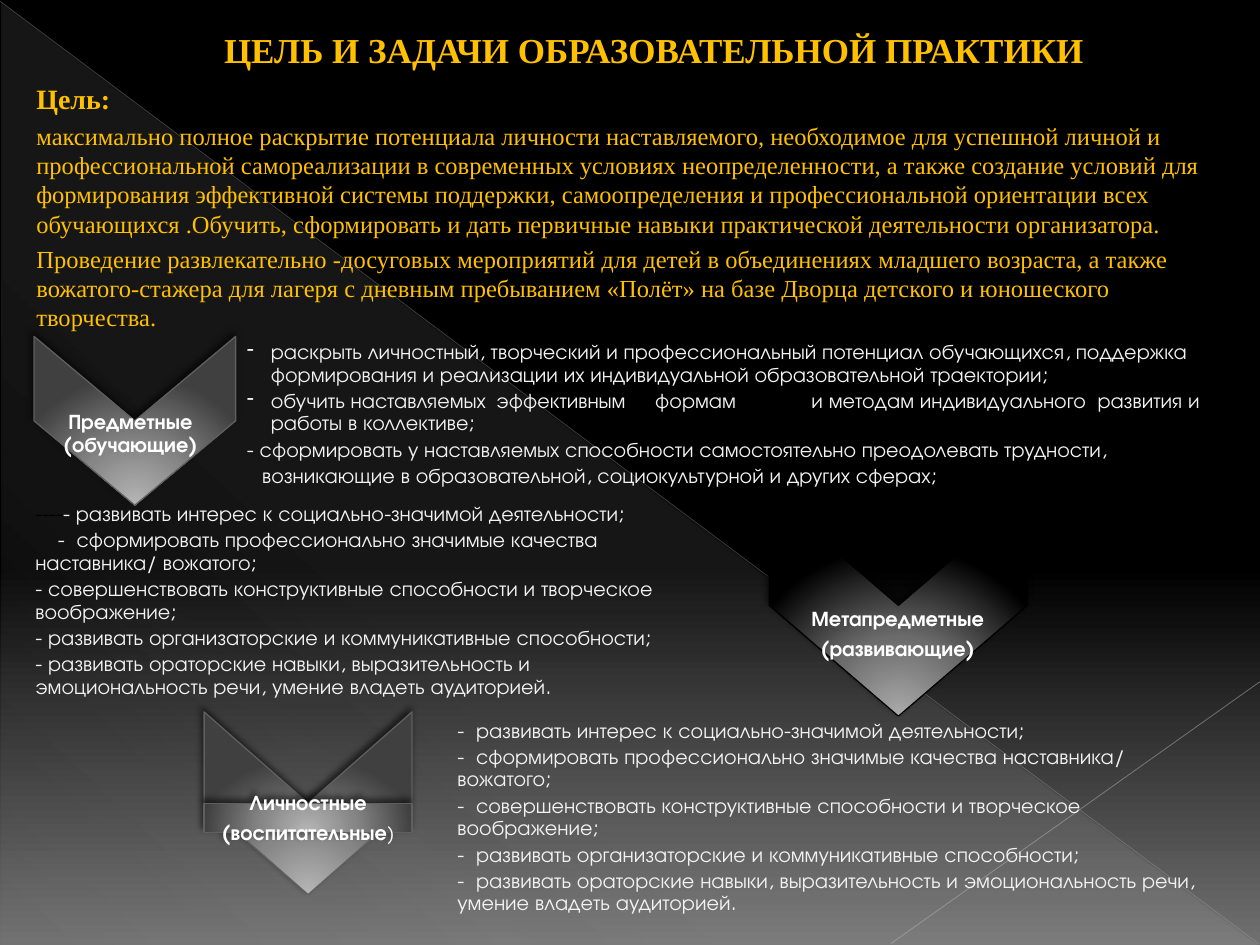
from dataclasses import dataclass

from lxml import etree
from pptx import Presentation
from pptx.dml.color import RGBColor
from pptx.enum.shapes import MSO_CONNECTOR, MSO_SHAPE
from pptx.enum.text import MSO_ANCHOR, PP_ALIGN
from pptx.oxml.ns import qn
from pptx.util import Inches, Pt

LEFT, CENTER = PP_ALIGN.LEFT, PP_ALIGN.CENTER
TOP, MIDDLE = MSO_ANCHOR.TOP, MSO_ANCHOR.MIDDLE


@dataclass(frozen=True)
class Theme:
    serif: str = "Times New Roman"
    sans: str = "TeX Gyre Adventor"
    gold: str = "FFC000"
    white: str = "FFFFFF"
    pale: str = "F2F2F2"
    black: str = "000000"
    title: int = 20
    heading: int = 16
    goal: int = 14
    body: int = 12
    small: int = 11


THEME = Theme()
GOAL = dict(font=THEME.serif, size=THEME.goal, color=THEME.gold, before=3)
HEADING = GOAL | dict(size=THEME.heading, bold=True)
TITLE = GOAL | dict(size=THEME.title, bold=True, before=4)
TASK = dict(font=THEME.sans, size=THEME.body, color=THEME.pale, spacing=0.9, after=2)
LABEL = TASK | dict(color=THEME.white, bold=True, align=CENTER, after=4.3)


def paint_gradient(owner, fill, stops, angle=None):
    """Fill with (percent, colour, opacity) stops, linear at angle or glowing from below."""
    fill.gradient()
    grad = owner.find(qn("a:gradFill"))
    for child in list(grad):
        grad.remove(child)
    grad.set("rotWithShape", "1")
    stop_list = etree.SubElement(grad, qn("a:gsLst"))
    for percent, color, opacity in stops:
        stop = etree.SubElement(stop_list, qn("a:gs"), pos=str(percent * 1000))
        tone = etree.SubElement(stop, qn("a:srgbClr"), val=color)
        if opacity < 100:
            etree.SubElement(tone, qn("a:alpha"), val=str(opacity * 1000))
    if angle is None:
        glow = etree.SubElement(grad, qn("a:path"), path="circle")
        etree.SubElement(glow, qn("a:fillToRect"), l="50000", t="155000", r="50000", b="-55000")
    else:
        etree.SubElement(grad, qn("a:lin"), ang=str(angle * 60000), scaled="0")


def write(frame, paragraphs, anchor, insets):
    """Write (runs, style) paragraphs; each run is (text, style overrides)."""
    frame.word_wrap = True
    frame.vertical_anchor = anchor
    for side, inset in zip(("left", "top", "right", "bottom"), insets):
        setattr(frame, f"margin_{side}", Inches(inset))
    for number, (runs, style) in enumerate(paragraphs):
        paragraph = frame.paragraphs[0] if number == 0 else frame.add_paragraph()
        paragraph.alignment = style.get("align", LEFT)
        paragraph.line_spacing = style.get("spacing", 1.0)
        paragraph.space_before = Pt(style.get("before", 0))
        paragraph.space_after = Pt(style.get("after", 0))
        props = paragraph._p.get_or_add_pPr()
        props.set("marL", str(Inches(style.get("margin", 0))))
        props.set("indent", str(Inches(style.get("indent", 0))))
        if "bullet" in style:
            etree.SubElement(props, qn("a:buChar"), char=style["bullet"])
        if "tabs" in style:
            tab_list = etree.SubElement(props, qn("a:tabLst"))
            for tab in style["tabs"]:
                etree.SubElement(tab_list, qn("a:tab"), pos=str(Inches(tab)), algn="l")
        for text, overrides in runs:
            look = style | overrides
            run = paragraph.add_run()
            run.text = text
            run.font.name = look["font"]
            run.font.size = Pt(look["size"])
            run.font.bold = look.get("bold", False)
            run.font.color.rgb = RGBColor.from_string(look["color"])


deck = Presentation()
deck.slide_width, deck.slide_height = Inches(10), Inches(7.5)
slide = deck.slides.add_slide(deck.slide_layouts[6])
shapes = slide.shapes

# Backdrop
backdrop = slide.background.fill
backdrop.solid()
paint_gradient(slide._element.find(".//" + qn("p:bgPr")), backdrop,
               [(0, THEME.black, 100), (60, THEME.black, 100), (100, "707070", 100)], 90)
sheen = shapes.add_shape(MSO_SHAPE.RIGHT_TRIANGLE, Inches(0.01), Inches(0.02),
                         Inches(9.98), Inches(7.48))
sheen.shadow.inherit = False
sheen.line.fill.background()
paint_gradient(sheen._element.spPr, sheen.fill,
               [(0, "F8F8F8", 10), (70, "F8F8F8", 8), (100, "F8F8F8", 1)], 133)
for ends, color, width, opacity in [((0, 0.01, 9.99, 7.49), "B4B4B4", 0.39, 35),
                                    ((10, 5.41, 7.07, 7.49), "BDBDBD", 0.47, 45)]:
    ray = shapes.add_connector(MSO_CONNECTOR.STRAIGHT, *map(Inches, ends))
    ray.line.color.rgb = RGBColor.from_string(color)
    ray.line.width = Pt(width)
    tone = ray._element.spPr.find(".//" + qn("a:srgbClr"))
    etree.SubElement(tone, qn("a:alpha"), val=str(opacity * 1000))
    etree.SubElement(ray._element.spPr, qn("a:effectLst"))

# Goal and tasks
goal = [
    ([("Цель:", {})], HEADING | dict(margin=0.07)),
    ([("максимально полное раскрытие потенциала личности наставляемого, необходимое для "
       "успешной личной и профессиональной самореализации в современных условиях "
       "неопределенности, а также создание условий для формирования эффективной системы "
       "поддержки, самоопределения и профессиональной ориентации всех обучающихся .Обучить, "
       "сформировать и дать первичные навыки практической деятельности организатора.", {})],
     GOAL | dict(margin=0.07)),
    ([("Проведение развлекательно -досуговых мероприятий для детей в объединениях младшего "
       "возраста, а также вожатого-стажера для лагеря с дневным пребыванием «Полёт» на базе "
       "Дворца детского и юношеского творчества.", {})], GOAL | dict(margin=0.07)),
]
title = [([("ЦЕЛЬ И ЗАДАЧИ ОБРАЗОВАТЕЛЬНОЙ ПРАКТИКИ", {})], TITLE | dict(margin=0.07))]

skills = [
    "развивать интерес к социально-значимой деятельности;",
    "сформировать профессионально значимые качества наставника/ вожатого;",
    "совершенствовать конструктивные способности и творческое воображение;",
    "развивать организаторские и коммуникативные способности;",
    "развивать ораторские навыки, выразительность и эмоциональность речи, "
    "умение владеть аудиторией.",
]
personal = [([("-  " + skill, {})], TASK) for skill in skills]
developing = [([("- " + skill, {})], TASK) for skill in skills]
developing[0] = ([("----", dict(color=THEME.black)), ("- ", dict(color=THEME.white)),
                  (skills[0], {})], TASK)
developing[1] = ([("-  " + skills[1], {})], TASK | dict(indent=0.18))

BULLETED = TASK | dict(margin=0.19, indent=-0.19, bullet="-")
teaching = [
    ([("раскрыть личностный, творческий и профессиональный потенциал обучающихся, поддержка "
       "формирования и реализации их индивидуальной образовательной траектории;", {})], BULLETED),
    ([("обучить наставляемых\tэффективным\tформам\tи методам индивидуального  развития "
       "и работы в коллективе;", {})], BULLETED | dict(tabs=(1.98, 3.24, 4.48))),
    ([("- сформировать у наставляемых способности самостоятельно преодолевать трудности,", {})],
     TASK),
    ([("возникающие в образовательной, социокультурной и других сферах;", {})],
     TASK | dict(margin=0.12)),
]

WIDE, SLIM, TIGHT = (0.1, 0.05, 0.1, 0.05), (0.09, 0.01, 0.01, 0.01), (0.01,) * 4
for box, paragraphs, anchor, insets in [
    ((0.12, 0.6, 9.61, 1.59), goal, TOP, WIDE),
    ((1.61, 0.18, 7.17, 0.85), title, TOP, WIDE),
    ((0.19, 4.22, 5.21, 1.1), developing, MIDDLE, SLIM),
    ((1.87, 2.57, 7.81, 1.44), teaching, MIDDLE, SLIM),
    ((3.54, 5.56, 6.11, 1.86), personal, MIDDLE, SLIM),
]:
    write(shapes.add_textbox(*map(Inches, box)).text_frame, paragraphs, anchor, insets)

# Arrows and their labels
GREY = ([(0, "B6B6B6", 100), (46, "868686", 100), (100, "404040", 100)], "5F5F5F")
DARK = ([(0, "ABABAB", 100), (46, "6C6C6C", 100), (100, THEME.black, 100)], THEME.black)
subject_label = [([("Предметные (обучающие)", {})], LABEL)]
meta_label = [([(line, {})], LABEL) for line in ("Метапредметные", "(развивающие)")]
personal_label = [
    ([("Личностные", {})], LABEL),
    ([("(воспитательные", {}), (")", dict(size=THEME.small, bold=False))], LABEL),
]
for preset, box, rotation, (stops, edge), label in [
    (MSO_SHAPE.CHEVRON, (0.4, 2.54, 1.34, 1.6), 90, GREY, None),
    (MSO_SHAPE.CHEVRON, (6.25, 3.78, 1.76, 2.05), 90, DARK, None),
    (MSO_SHAPE.CHEVRON, (1.72, 5.55, 1.45, 1.65), 90, GREY, None),
    (MSO_SHAPE.RECTANGLE, (1.62, 6.38, 1.65, 0.23), 0, GREY, personal_label),
]:
    arrow = shapes.add_shape(preset, *map(Inches, box))
    arrow.rotation = rotation
    arrow.line.color.rgb = RGBColor.from_string(edge)
    arrow.line.width = Pt(0.75)
    paint_gradient(arrow._element.spPr, arrow.fill, stops)
    arrow.shadow.inherit = False
    effects = arrow._element.spPr.find(qn("a:effectLst"))
    shadow = etree.SubElement(effects, qn("a:outerShdw"), blurRad=str(Pt(4)), dist=str(Pt(3)),
                              dir=str(245 * 60000), rotWithShape="0")
    tone = etree.SubElement(shadow, qn("a:srgbClr"), val=THEME.black)
    etree.SubElement(tone, qn("a:alpha"), val="60000")
    if label:
        write(arrow.text_frame, label, MIDDLE, TIGHT)
for box, label in [((6.1, 4.92, 2.05, 0.24), meta_label),
                   ((0.21, 3.33, 1.65, 0.23), subject_label)]:
    write(shapes.add_textbox(*map(Inches, box)).text_frame, label, MIDDLE, TIGHT)

deck.save("out.pptx")
